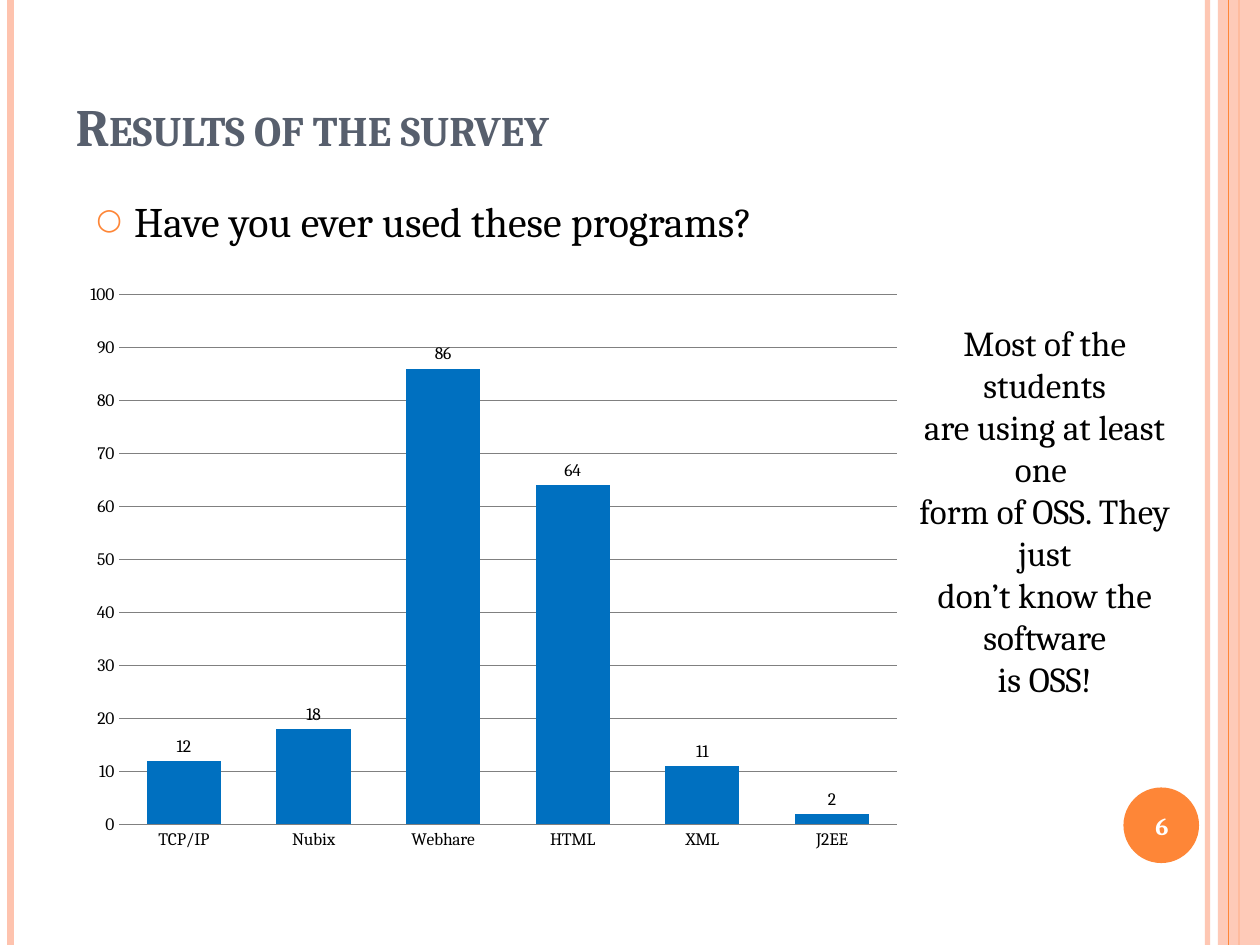
from lxml.etree import SubElement
from pptx import Presentation
from pptx.chart.data import CategoryChartData
from pptx.dml.color import RGBColor
from pptx.enum.chart import XL_CHART_TYPE as CHART, XL_LABEL_POSITION as LABEL, XL_TICK_MARK as TICK
from pptx.enum.shapes import MSO_CONNECTOR as CONNECTOR, MSO_SHAPE as SHAPE
from pptx.enum.text import MSO_ANCHOR as ANCHOR, PP_ALIGN as ALIGN
from pptx.oxml.ns import qn
from pptx.util import Pt

ORANGE = RGBColor(0xFE, 0x86, 0x37)
PEACH = RGBColor(0xFE, 0xC3, 0xAE)
SLATE = RGBColor(0x57, 0x5F, 0x6D)
BLUE = RGBColor(0x00, 0x70, 0xC0)
GRAY = RGBColor(0x80, 0x80, 0x80)
BLACK = RGBColor(0, 0, 0)
WHITE = RGBColor(0xFF, 0xFF, 0xFF)
FONT = "Cambria"
WIDTH, HEIGHT = 720, 540


def set_alpha(fill, percent):
    color = fill._xPr.find(qn("a:solidFill"))[0]
    SubElement(color, qn("a:alpha"), val=str(percent * 1000))


def set_bullet(p, char, color, percent, indent):
    pPr = p._p.get_or_add_pPr()
    pPr.set("marL", str(Pt(indent)))
    pPr.set("indent", str(-Pt(indent)))
    clr = SubElement(pPr, qn("a:buClr"))
    SubElement(clr, qn("a:srgbClr"), val=str(color))
    SubElement(pPr, qn("a:buSzPct"), val=str(percent * 1000))
    SubElement(pPr, qn("a:buFont"), typeface=FONT)
    SubElement(pPr, qn("a:buChar"), char=char)


class SlideBuilder:
    """Holds the font style and the current slide."""

    def __init__(self, prs):
        self.slide = prs.slides.add_slide(prs.slide_layouts[5])
        self.shapes = self.slide.shapes

    def style(self, font, **values):
        color = values.pop("color", BLACK)
        for name, value in {"name": FONT, **values}.items():
            setattr(font, name, value)
        font.color.rgb = color

    def fill_text(self, sp, text, align=ALIGN.LEFT, anchor=ANCHOR.TOP, **values):
        tf = sp.text_frame
        tf.word_wrap = True
        tf.vertical_anchor = anchor
        p = tf.paragraphs[0]
        p.text = text
        p.alignment = align
        for r in p.runs:
            self.style(r.font, **values)
        return p

    def title(self, text, box, **values):
        sp = self.shapes.title
        for name, value in zip(("left", "top", "width", "height"), box):
            setattr(sp, name, Pt(value))
        p = self.fill_text(sp, text, anchor=ANCHOR.BOTTOM, **values)
        p.runs[0].font._element.set("cap", "small")

    def text(self, text, box, **values):
        return self.fill_text(self.shapes.add_textbox(*map(Pt, box)), text, **values)

    def vertical_line(self, x, width, color, alpha=100):
        line = self.shapes.add_connector(CONNECTOR.STRAIGHT, Pt(x), 0, Pt(x), Pt(HEIGHT))
        line.line.width = Pt(width)
        line.line.color.rgb = color
        if alpha < 100:
            set_alpha(line.line.fill, alpha)
        SubElement(line._element.spPr, qn("a:effectLst"))

    def shape(self, kind, box, color, alpha=100):
        sp = self.shapes.add_shape(kind, *map(Pt, box))
        sp.shadow.inherit = False
        sp.fill.solid()
        sp.fill.fore_color.rgb = color
        sp.line.fill.background()
        if alpha < 100:
            set_alpha(sp.fill, alpha)

    def column_chart(self, counts, box, color):
        data = CategoryChartData()
        data.categories = list(counts)
        data.add_series("Series 1", list(counts.values()))
        chart = self.shapes.add_chart(CHART.COLUMN_CLUSTERED, *map(Pt, box), data).chart
        chart.has_legend = chart.has_title = False
        self.style(chart.font, size=Pt(10))

        plot = chart.plots[0]
        plot.gap_width = 75
        plot.vary_by_categories = False
        plot.has_data_labels = True
        plot.data_labels.show_value = True
        plot.data_labels.position = LABEL.OUTSIDE_END
        fill = plot.series[0].format.fill
        fill.solid()
        fill.fore_color.rgb = color

        values, categories = chart.value_axis, chart.category_axis
        for axis in (values, categories):
            axis.major_tick_mark = axis.minor_tick_mark = TICK.NONE
        values.minimum_scale, values.maximum_scale, values.major_unit = 0, 100, 10
        values.format.line.fill.background()
        for line in (values.major_gridlines.format.line, categories.format.line):
            line.width = Pt(0.75)
            line.color.rgb = GRAY


def main():
    prs = Presentation()
    prs.slide_width, prs.slide_height = Pt(WIDTH), Pt(HEIGHT)
    s = SlideBuilder(prs)

    s.vertical_line(690, 3, PEACH, alpha=93)
    s.vertical_line(6, 4.5, PEACH)
    s.vertical_line(708, 1.5, ORANGE)
    s.shape(SHAPE.RECTANGLE, (696, 0, 24, HEIGHT), PEACH, alpha=87)
    s.vertical_line(702, 0.75, ORANGE)
    s.shape(SHAPE.OVAL, (642, 450, 43.2, 43.2), ORANGE)

    s.title("Results of the survey", (36, 30, 588, 63.5),
            size=Pt(30), bold=True, color=SLATE)
    s.text("Most of the students\nare using at least one \nform of OSS. They just\n"
           "don’t know the software\nis OSS!",
           (516, 180, 162, 225), align=ALIGN.CENTER, size=Pt(20))
    programs = {"TCP/IP": 12, "Nubix": 18, "Webhare": 86, "HTML": 64, "XML": 11, "J2EE": 2}
    s.column_chart(programs, (42, 156, 480, 336), BLUE)
    question = s.text("Have you ever used these programs?", (48, 108, 486, 42), size=Pt(24))
    question.space_before = Pt(6)
    set_bullet(question, "○", ORANGE, 70, indent=21.6)
    s.text("6", (640, 451.5, 48, 41), align=ALIGN.CENTER, anchor=ANCHOR.MIDDLE,
           size=Pt(14), bold=True, color=WHITE)

    prs.save("out.pptx")


if __name__ == "__main__":
    main()
